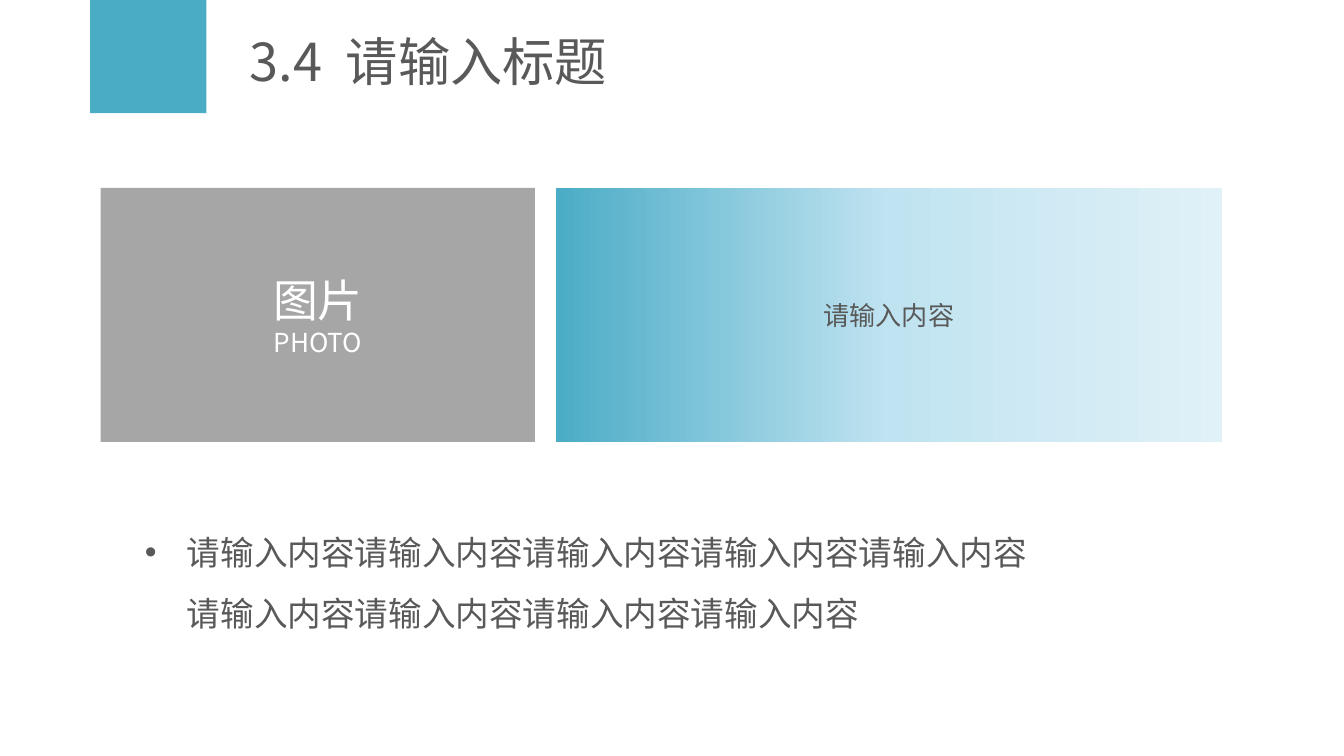
from copy import deepcopy
from dataclasses import dataclass

from lxml.etree import SubElement
from pptx import Presentation
from pptx.dml.color import RGBColor
from pptx.enum.shapes import MSO_SHAPE
from pptx.enum.text import MSO_ANCHOR, MSO_AUTO_SIZE, PP_ALIGN
from pptx.oxml.ns import qn
from pptx.util import Pt


@dataclass(frozen=True)
class Theme:
    font: str = "Noto Sans CJK SC"
    teal: str = "4BACC6"
    grey: str = "A6A6A6"
    ink: str = "595959"
    white: str = "FFFFFF"
    fade: tuple = ("4BACC6", "C0E3F1", "E0F1F7")
    title: int = 28
    photo: int = 24
    body: int = 18
    small: int = 14


theme = Theme()


def style(para, size, color, align=PP_ALIGN.LEFT):
    para.alignment = align
    for run in para.runs:
        run.font.size = Pt(size)
        run.font.color.rgb = RGBColor.from_string(color)
        run.font.name = theme.font
        SubElement(run.font._element, qn("a:ea"), typeface=theme.font)


def block(left, top, width, height, color):
    box = slide.shapes.add_shape(
        MSO_SHAPE.RECTANGLE, Pt(left), Pt(top), Pt(width), Pt(height))
    box.shadow.inherit = False
    box.fill.solid()
    box.fill.fore_color.rgb = RGBColor.from_string(color)
    box.line.fill.background()
    box.text_frame.vertical_anchor = MSO_ANCHOR.MIDDLE
    return box


deck = Presentation()
deck.slide_width, deck.slide_height = Pt(720), Pt(405)
slide = deck.slides.add_slide(deck.slide_layouts[5])

# Accent block beside the title
block(48.24, 0, 62.4, 60.7, theme.teal)

# Title, with a widened space after the number
title = slide.shapes.title
title.left, title.top, title.width, title.height = Pt(126.7), Pt(10), Pt(568), Pt(45.4)
frame = title.text_frame
frame.auto_size = MSO_AUTO_SIZE.NONE
frame.vertical_anchor = MSO_ANCHOR.MIDDLE
para = frame.paragraphs[0]
for part in ("3.4", " ", "请输入标题"):
    para.add_run().text = part
style(para, theme.title, theme.ink)
para.runs[1].font._element.set("spc", "630")

# Photo area
top, height = 100.6, 136.2
photo = block(54, top, 232.6, height, theme.grey)
photo.text_frame.text = "图片\nPHOTO"
for para, size in zip(photo.text_frame.paragraphs, (theme.photo, theme.small)):
    style(para, size, theme.white, PP_ALIGN.CENTER)

# Content panel with a three-stop gradient
panel = block(297.8, top, 356.9, height, theme.teal)
panel.fill.gradient()
panel.fill.gradient_angle = 0
stops = panel._element.spPr.find(".//" + qn("a:gsLst"))
stops.insert(1, deepcopy(stops[0]))
for stop, color, place in zip(panel.fill.gradient_stops, theme.fade, (0, 0.5, 1)):
    stop.color.rgb = RGBColor.from_string(color)
    stop.position = place
frame = panel.text_frame
frame.margin_left = frame.margin_right = frame.margin_top = frame.margin_bottom = 0
frame.text = "请输入内容"
style(frame.paragraphs[0], theme.small, theme.ink, PP_ALIGN.CENTER)

# Bullet text
note = slide.shapes.add_textbox(Pt(70.6), Pt(270.7), Pt(499), Pt(101.5))
frame = note.text_frame
frame.word_wrap = True
frame.auto_size = MSO_AUTO_SIZE.SHAPE_TO_FIT_TEXT
frame.text = "请输入内容" * 9
para = frame.paragraphs[0]
para.line_spacing = 1.5
style(para, theme.body, theme.ink)
props = para._p.get_or_add_pPr()
props.set("marL", str(Pt(22.5)))
props.set("indent", str(-Pt(22.5)))
SubElement(props, qn("a:buFont"), typeface="Arial")
SubElement(props, qn("a:buChar"), char="•")

deck.save("out.pptx")
